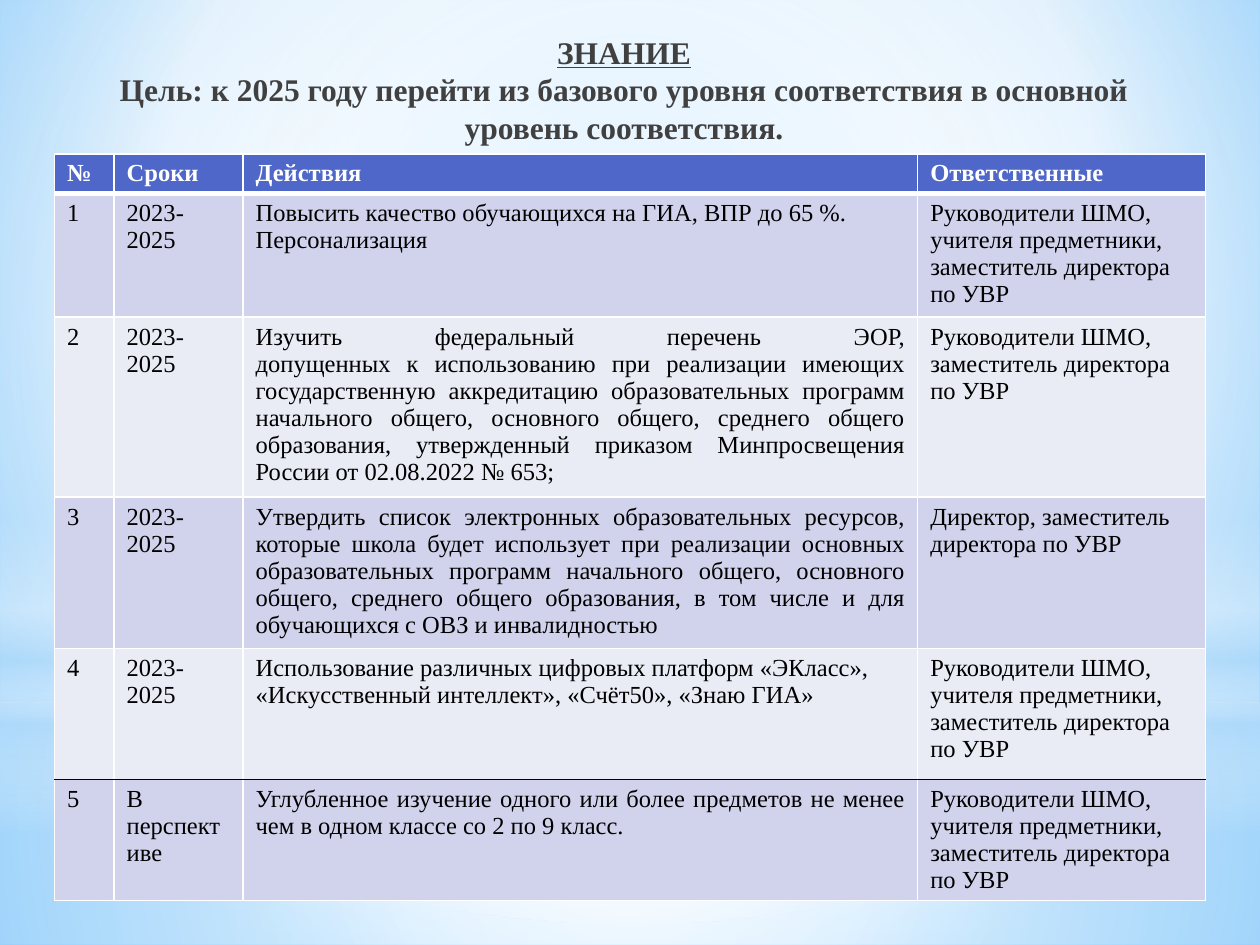
from collections import namedtuple

from lxml import etree
from pptx import Presentation
from pptx.dml.color import RGBColor
from pptx.enum.shapes import MSO_SHAPE
from pptx.enum.text import MSO_ANCHOR, MSO_AUTO_SIZE, PP_ALIGN
from pptx.oxml.ns import qn
from pptx.util import Cm, Pt

RECT, OVAL = MSO_SHAPE.RECTANGLE, MSO_SHAPE.OVAL
LEFT, MID, JUST = PP_ALIGN.LEFT, PP_ALIGN.CENTER, PP_ALIGN.JUSTIFY
TOP, FIXED = MSO_ANCHOR.TOP, MSO_AUTO_SIZE.NONE

Theme = namedtuple("Theme", "font big small title head odd even white black sky rim glow")
theme = Theme(font="Times New Roman", big=18, small=14, title="404040",
              head="4E67C8", odd="D0D3EB", even="E9EBF5", white="FFFFFF",
              black="000000", sky="B4DCFA", rim="5BB9FF", glow="9ED5FF")


def write(par, text, size=theme.small, color=theme.black, bold=False,
          under=False, align=LEFT):
    par.alignment = align
    for i, line in enumerate(text.split("\n")):
        if i:
            par.add_line_break()
        run = par.add_run()
        run.text = line
        font = run.font
        font.name, font.size = theme.font, Pt(size)
        font.bold, font.underline = bold, under
        font.color.rgb = RGBColor.from_string(color)


def shade(root, stops, focus=None):
    """Turn the first solid fill into a gradient: round with a focus, else downward."""
    old = root.find(".//" + qn("a:solidFill"))
    grad = etree.Element(qn("a:gradFill"), rotWithShape="1")
    row = etree.SubElement(grad, qn("a:gsLst"))
    for pos, color, alpha in stops:
        stop = etree.SubElement(row, qn("a:gs"), pos=str(pos * 1000))
        tint = etree.SubElement(stop, qn("a:srgbClr"), val=color)
        if alpha < 100:
            etree.SubElement(tint, qn("a:alpha"), val=str(alpha * 1000))
    if focus:
        ring = etree.SubElement(grad, qn("a:path"), path="circle")
        sides = {side: str(val * 1000) for side, val in zip("ltrb", focus)}
        etree.SubElement(ring, qn("a:fillToRect"), **sides)
    else:
        etree.SubElement(grad, qn("a:lin"), ang="5400000", scaled="0")
    old.getparent().replace(old, grad)


prs = Presentation()
prs.slide_width, prs.slide_height = Cm(25.4), Cm(19.05)
slide = prs.slides.add_slide(prs.slide_layouts[5])
shapes = slide.shapes

# Sky background
slide.background.fill.solid()
shade(slide.element, [(0, theme.glow, 100), (60, theme.white, 100), (100, theme.rim, 100)],
      (20, 10, 20, 60))

# Soft light layers: kind, top, height, gradient stops, focus
center = (50, 50, 50, 50)
layers = [
    (RECT, 14.17, 4.88,
     [(0, theme.white, 91), (37, theme.white, 76), (100, theme.sky, 79)], center),
    (RECT, 0, 14.17,
     [(0, theme.white, 89), (48, theme.white, 62), (100, theme.sky, 79)], center),
    (RECT, 10.46, 6.35,
     [(0, theme.white, 0), (29, theme.white, 30), (45, theme.sky, 40),
      (55, theme.white, 26), (65, theme.sky, 60), (100, theme.white, 0)], None),
    (OVAL, 4.45, 14.17, [(0, theme.white, 100), (56, theme.white, 0)], center),
]
for kind, top, high, stops, focus in layers:
    layer = shapes.add_shape(kind, 0, Cm(top), prs.slide_width, Cm(high))
    layer.shadow.inherit = False
    layer.line.fill.background()
    layer.fill.solid()
    shade(layer.element, stops, focus)

# Title, raised above the layers
title = shapes.title
title.element.getparent().append(title.element)
title.left, title.top, title.width, title.height = Cm(1.9), Cm(0.53), Cm(21.36), Cm(17.2)
frame = title.text_frame
frame.word_wrap = True
frame.auto_size = FIXED
frame.vertical_anchor = TOP
par = frame.paragraphs[0]
par.line_spacing = 1.0
par.space_before = Pt(0)
look = dict(size=theme.big, color=theme.title, bold=True, align=MID)
write(par, "ЗНАНИЕ", under=True, **look)
par.add_line_break()
write(par, "Цель: к 2025 году перейти из базового уровня соответствия "
           "в основной уровень соответствия.", **look)

# Table content
years = "2023-2025"
staff = "Руководители ШМО, учителя предметники, заместитель директора по УВР"
rows = [
    ("№", "Сроки", "Действия", "Ответственные"),
    ("1", years, "Повысить качество обучающихся на ГИА, ВПР до 65 %. Персонализация", staff),
    ("2", years,
     "Изучить федеральный перечень ЭОР,\nдопущенных к использованию при реализации "
     "имеющих государственную аккредитацию образовательных программ начального общего, "
     "основного общего, среднего общего образования, утвержденный приказом "
     "Минпросвещения России от 02.08.2022 № 653;",
     "Руководители ШМО, заместитель директора по УВР"),
    ("3", years,
     "Утвердить список электронных образовательных ресурсов, которые школа будет "
     "использует при реализации основных образовательных программ начального общего, "
     "основного общего, среднего общего образования, в том числе и для обучающихся "
     "с ОВЗ и инвалидностью",
     "Директор, заместитель директора по УВР"),
    ("4", years,
     "Использование различных цифровых платформ «ЭКласс», «Искусственный интеллект», "
     "«Счёт50», «Знаю ГИА»", staff),
    ("5", "В перспективе",
     "Углубленное изучение одного или более предметов не менее чем в одном классе "
     "со 2 по 9 класс.", staff),
]
wides = [1.2, 2.6, 13.6, 5.8]
highs = [0.8, 2.49, 3.63, 3.05, 2.64, 2.44]
just = {2, 3, 5}

# Rules between rows, from the top edge to the bottom edge: points, color
rules = [(1, theme.white)] * (len(rows) + 1)
rules[1] = (3, theme.white)
rules[5] = (1, theme.black)

# Table
table = shapes.add_table(len(rows), len(wides), Cm(1.1), Cm(3.1),
                         Cm(sum(wides)), Cm(sum(highs))).table
for col, wide in zip(table.columns, wides):
    col.width = Cm(wide)
for r, texts in enumerate(rows):
    table.rows[r].height = Cm(highs[r])
    is_head = r == 0
    back = theme.head if is_head else theme.odd if r % 2 else theme.even
    edges = {"L": rules[0], "R": rules[0], "T": rules[r], "B": rules[r + 1]}
    for c, text in enumerate(texts):
        cell = table.cell(r, c)
        props = cell._tc.get_or_add_tcPr()
        for side, (points, color) in edges.items():
            edge = etree.SubElement(props, qn("a:ln" + side), w=str(Pt(points)))
            ink = etree.SubElement(edge, qn("a:solidFill"))
            etree.SubElement(ink, qn("a:srgbClr"), val=color)
        cell.fill.solid()
        cell.fill.fore_color.rgb = RGBColor.from_string(back)
        write(cell.text_frame.paragraphs[0], text, bold=is_head,
              color=theme.white if is_head else theme.black,
              align=JUST if c == 2 and r in just else LEFT)
table.cell(5, 2).text_frame.paragraphs[0].space_after = Pt(8)

prs.save("out.pptx")
